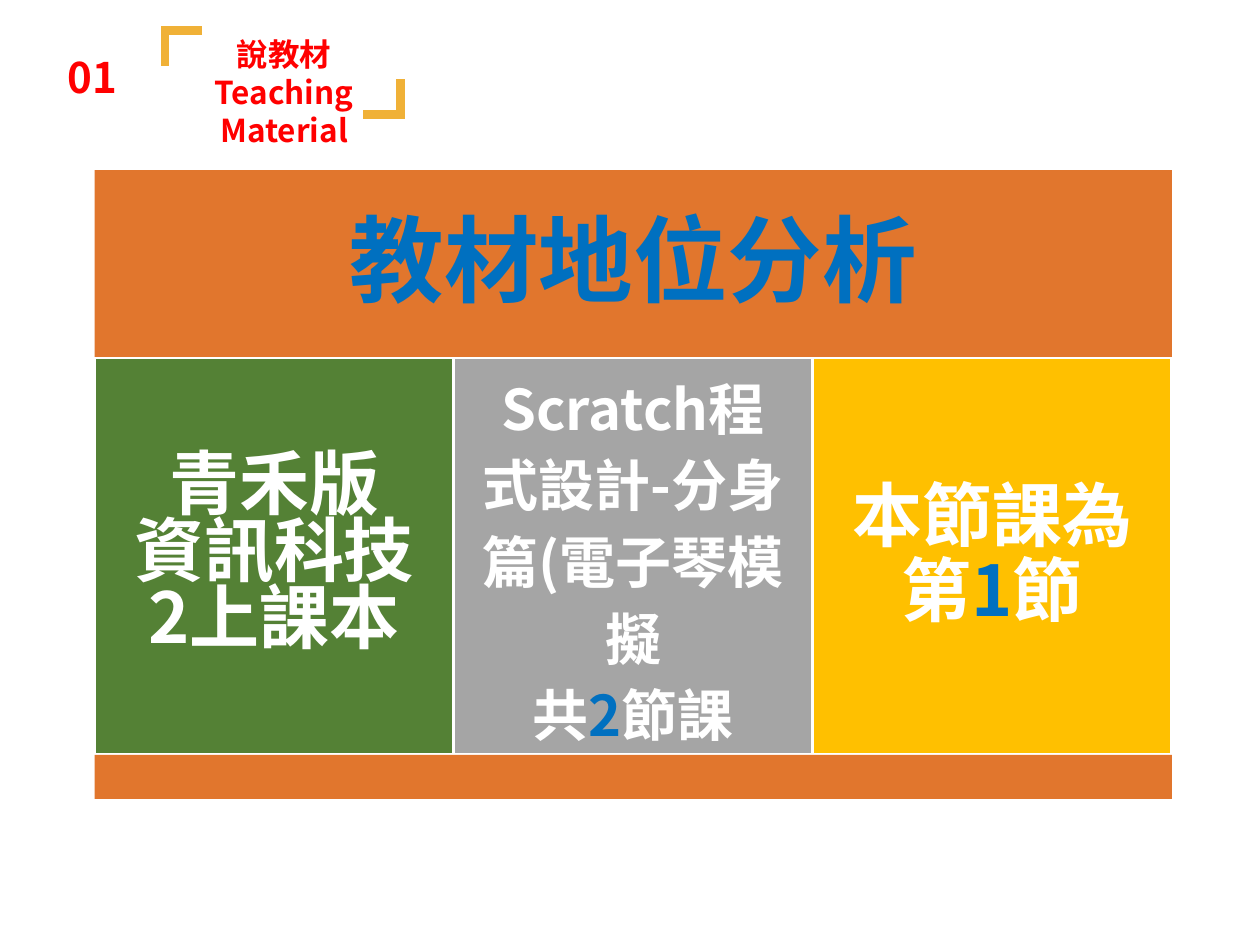
from lxml import etree
from pptx import Presentation
from pptx import util as u
from pptx.dml.color import RGBColor
from pptx.enum import shapes, text
from pptx.oxml import ns

THEME = {
    "font": "Noto Sans CJK TC",
    "red": "FF0000", "blue": "0070C0", "white": "FFFFFF", "gold": "F0B137",
    "orange": "E1762D", "green": "548135", "gray": "A5A5A5", "yellow": "FFC000",
    "header": 18, "number": 24, "medium": 32, "large": 40, "banner": 54,
}


def write(shape, lines, size, inset, anchor="MIDDLE", spacing=1.0, align="CENTER"):
    """Fill a shape with paragraphs, each a list of (text, colour) runs; \n breaks a line."""
    frame = shape.text_frame
    margins = dict(zip(("left", "top", "right", "bottom"), inset))
    for side, margin in margins.items():
        setattr(frame, f"margin_{side}", u.Inches(margin))
    settings = {"word_wrap": True, "auto_size": text.MSO_AUTO_SIZE.NONE,
                "vertical_anchor": getattr(text.MSO_ANCHOR, anchor)}
    for name, value in settings.items():
        setattr(frame, name, value)
    for index, runs in enumerate(lines):
        paragraph = frame.add_paragraph() if index else frame.paragraphs[0]
        paragraph.alignment = getattr(text.PP_ALIGN, align)
        paragraph.line_spacing = spacing
        for content, color in runs:
            for part_index, part in enumerate(content.split("\n")):
                if part_index:
                    paragraph.add_line_break()
                run = paragraph.add_run()
                run.text = part
                values = {"name": THEME["font"], "size": u.Pt(THEME[size]), "bold": True}
                for name, value in values.items():
                    setattr(run.font, name, value)
                run.font.color.rgb = RGBColor.from_string(THEME[color])
                east_asian = etree.SubElement(run.font._element, ns.qn("a:ea"))
                east_asian.set("typeface", THEME["font"])


def add_block(slide, left, top, width, height, fill, outlined=False):
    box = [u.Inches(value) for value in (left, top, width, height)]
    shape = slide.shapes.add_shape(shapes.MSO_SHAPE.RECTANGLE, *box)
    shape.shadow.inherit = False
    shape.fill.solid()
    shape.fill.fore_color.rgb = RGBColor.from_string(THEME[fill])
    if outlined:
        shape.line.color.rgb = RGBColor.from_string(THEME["white"])
        shape.line.width = u.Pt(1.5)
    else:
        shape.line.fill.background()
    return shape


presentation = Presentation()
presentation.slide_width, presentation.slide_height = u.Inches(10), u.Inches(7.5)
slide = presentation.slides.add_slide(presentation.slide_layouts[5])

# Section header: title, number and corner brackets
title = slide.shapes.title
position = {"left": 1.07, "top": 0.23, "width": 2.37, "height": 0.66}
for name, value in position.items():
    setattr(title, name, u.Inches(value))
write(title, [[("說教材", "red")], [("Teaching\nMaterial", "red")]],
      "header", (0.1, 0.05, 0.1, 0), anchor="TOP")

number = slide.shapes.add_textbox(u.Inches(0.44), u.Inches(0.36), u.Inches(0.63), u.Inches(0.5))
write(number, [[("01", "red")]], "number", (0.1, 0.05, 0.1, 0.05), anchor="TOP", align="LEFT")

brackets = [
    [(1.31, 0.52), (1.31, 0.24), (1.6, 0.24)],
    [(3.18, 0.63), (3.18, 0.91), (2.88, 0.91)],
]
for corners in brackets:
    points = [(u.Inches(x), u.Inches(y)) for x, y in corners]
    builder = slide.shapes.build_freeform(*points[0])
    builder.add_line_segments(points[1:], close=False)
    bracket = builder.convert_to_shape()
    bracket.shadow.inherit = False
    bracket.fill.background()
    bracket.line.color.rgb = RGBColor.from_string(THEME["gold"])
    bracket.line.width = u.Pt(5)
    etree.SubElement(bracket.line._get_or_add_ln(), ns.qn("a:miter")).set("lim", "800000")

# Banner, three columns and base strip
left, width = 0.75, 8.55
banner = add_block(slide, left, 1.35, width, 1.5, "orange")
write(banner, [[("教材地位分析", "blue")]], "banner", [0.22] * 4, spacing=0.9)

columns = [
    ("green", "large", 0.8, [("青禾版\n資訊科技\n2上課本", "white")]),
    ("gray", "medium", 1.14, [("Scratch程式設計-分身篇(電子琴模擬\n共", "white"),
                              ("2", "blue"), ("節課", "white")]),
    ("yellow", "large", 0.9, [("本節課為第", "white"), ("1", "blue"), ("節", "white")]),
]
column_width = width / len(columns)
for index, (fill, size, spacing, runs) in enumerate(columns):
    column = add_block(slide, left + index * column_width, 2.84, column_width, 3.15, fill, True)
    write(column, [runs], size, [0.18] * 4, spacing=spacing)

add_block(slide, left, 5.99, width, 0.35, "orange")

presentation.save("out.pptx")
